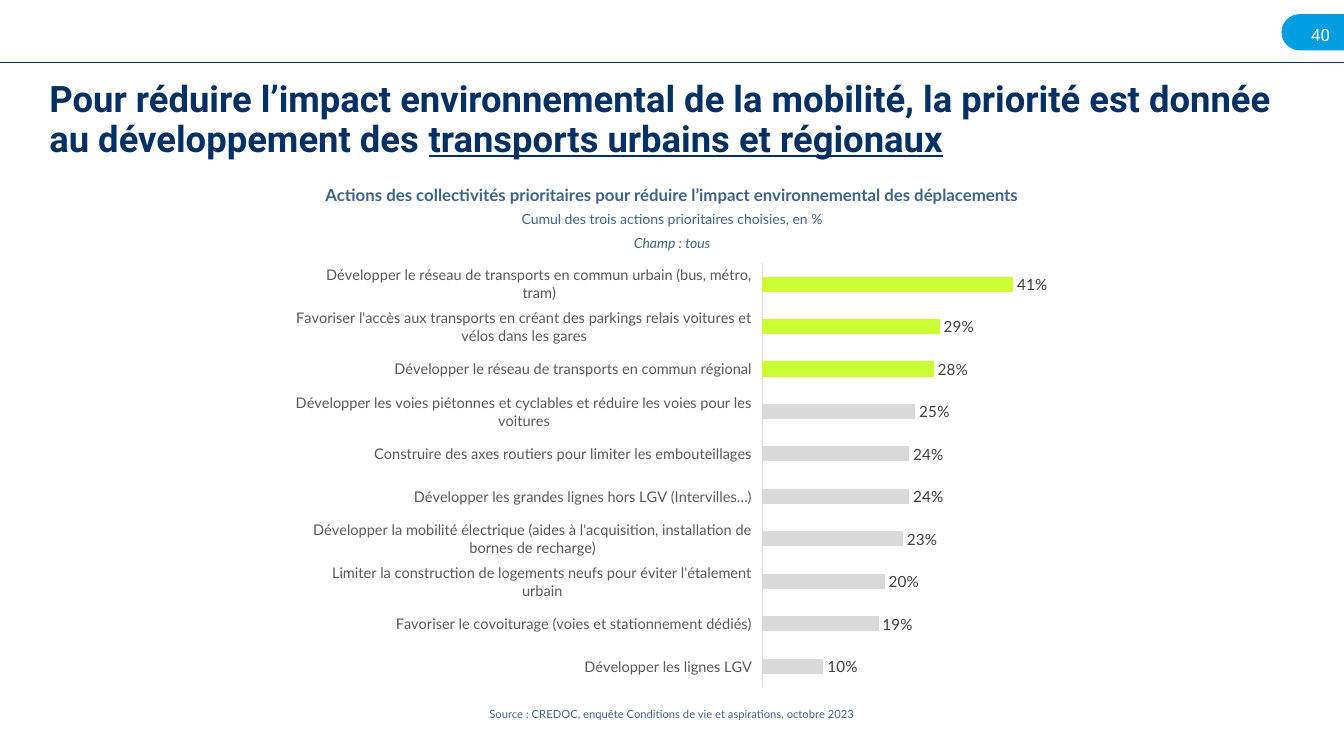
from dataclasses import dataclass

from lxml.etree import SubElement
from pptx import Presentation
from pptx.chart.data import CategoryChartData
from pptx.dml.color import RGBColor
from pptx.enum.chart import XL_CHART_TYPE, XL_LABEL_POSITION, XL_TICK_LABEL_POSITION, XL_TICK_MARK
from pptx.enum.shapes import MSO_CONNECTOR, MSO_SHAPE
from pptx.enum.text import MSO_ANCHOR, PP_ALIGN
from pptx.oxml import parse_xml
from pptx.oxml.ns import nsdecls, qn
from pptx.util import Inches, Pt

PAGE_NUMBER = "40"
TITLE = [
    ("Pour réduire l’impact environnemental de la mobilité, la priorité est donnée "
     "au développement des ", False),
    ("transports urbains et régionaux", True),
]
# text, top, height, size, extra format
CAPTIONS = [
    ("Actions des collectivités prioritaires pour réduire l’impact environnemental des déplacements",
     1.81, 0.23, "heading", {"bold": True}),
    ("Cumul des trois actions prioritaires choisies, en %", 2.06, 0.23, "caption", {}),
    ("Champ : tous", 2.3, 0.23, "caption", {"italic": True}),
    ("Source : CREDOC, enquête Conditions de vie et aspirations, octobre 2023",
     6.98, 0.37, "source", {}),
]
ACTIONS = [
    ("Développer le réseau de transports en commun urbain (bus, métro, tram)", 0.41),
    ("Favoriser l'accès aux transports en créant des parkings relais voitures et vélos dans les gares", 0.29),
    ("Développer le réseau de transports en commun régional", 0.28),
    ("Développer les voies piétonnes et cyclables et réduire les voies pour les voitures", 0.25),
    ("Construire des axes routiers pour limiter les embouteillages", 0.24),
    ("Développer les grandes lignes hors LGV (Intervilles…)", 0.24),
    ("Développer la mobilité électrique (aides à l'acquisition, installation de bornes de recharge)", 0.23),
    ("Limiter la construction de logements neufs pour éviter l'étalement urbain", 0.2),
    ("Favoriser le covoiturage (voies et stationnement dédiés)", 0.19),
    ("Développer les lignes LGV", 0.1),
]
HIGHLIGHTED = 3


@dataclass(frozen=True)
class Theme:
    navy = RGBColor.from_string("003064")
    blue = RGBColor.from_string("009EE0")
    white = RGBColor.from_string("FFFFFF")
    lime = RGBColor.from_string("CBFF33")
    grey = RGBColor.from_string("D9D9D9")
    axis_text = RGBColor.from_string("595959")
    label_text = RGBColor.from_string("404040")
    title_font = "Roboto"
    body_font = "Lato"
    sizes = {"title": 26, "number": 12, "heading": 12, "caption": 10, "source": 8,
             "category": 10.5, "value": 11}


WIDTH, HEIGHT = 13.33, 7.5
COLUMN_WIDTH = 0.56 * WIDTH
COLUMN_LEFT = (WIDTH - COLUMN_WIDTH) / 2
CHART_TOP, CHART_HEIGHT = 2.52, 4.39
PLOT = {"x": 0.616, "y": 0.02, "w": 0.37, "h": 0.96}  # shares of the chart frame
AXIS_MAXIMUM = 0.45


def set_font(font, size, color, name):
    font.size = Pt(Theme.sizes[size])
    font.color.rgb = color
    font.name = name


def add_text(page, spans, left, top, width, height, size, color=Theme.navy, name=Theme.body_font,
             align=PP_ALIGN.CENTER, anchor=MSO_ANCHOR.TOP, spacing=0.9, opacity=None,
             bold=False, italic=False):
    """Add one paragraph; spans are (text, underlined) pairs."""
    box = page.shapes.add_textbox(Inches(left), Inches(top), Inches(width), Inches(height))
    frame = box.text_frame
    frame.word_wrap = True
    frame.vertical_anchor = anchor
    para = frame.paragraphs[0]
    para.alignment = align
    para.line_spacing = spacing
    for text, underlined in spans:
        span = para.add_run()
        span.text = text
        set_font(span.font, size, color, name)
        span.font.bold, span.font.italic = bold, italic
        if underlined:
            span.font.underline = True
        if opacity:
            fill = span.font._element.find(qn("a:solidFill"))
            SubElement(fill[0], qn("a:alpha"), val=str(opacity * 1000))


def add_header(page):
    badge = page.shapes.add_shape(MSO_SHAPE.ROUNDED_RECTANGLE, Inches(12.71), Inches(0.14),
                                  Inches(2.02), Inches(0.36))
    badge.adjustments[0] = 0.5
    badge.shadow.inherit = False
    badge.fill.solid()
    badge.fill.fore_color.rgb = Theme.blue
    badge.line.fill.background()
    add_text(page, [(PAGE_NUMBER, False)], 12.7, 0.18, 0.59, 0.33, "number", color=Theme.white,
             name=Theme.title_font, align=PP_ALIGN.RIGHT, anchor=MSO_ANCHOR.MIDDLE, spacing=1.0)
    rule = page.shapes.add_connector(MSO_CONNECTOR.STRAIGHT, 0, Inches(0.62),
                                     Inches(WIDTH), Inches(0.62))
    rule.line.color.rgb = Theme.navy
    rule.line.width = Pt(1)
    SubElement(rule._element.spPr, qn("a:effectLst"))


def place_plot(chart):
    """Fix the inner plot area so that the bars start at a set place."""
    plot_area = chart._chartSpace.chart.plotArea
    for old in plot_area.findall(qn("c:layout")):
        plot_area.remove(old)
    parts = "".join(f'<c:{key} val="{share}"/>' for key, share in PLOT.items())
    plot_area.insert(0, parse_xml(
        f'<c:layout {nsdecls("c")}><c:manualLayout><c:layoutTarget val="inner"/>'
        f'<c:xMode val="edge"/><c:yMode val="edge"/>{parts}</c:manualLayout></c:layout>'))


def add_actions_chart(page):
    data = CategoryChartData(number_format="0%")
    data.categories = [action for action, _ in ACTIONS]
    data.add_series("Series 1", [share for _, share in ACTIONS])
    chart = page.shapes.add_chart(XL_CHART_TYPE.BAR_CLUSTERED, Inches(COLUMN_LEFT),
                                  Inches(CHART_TOP), Inches(COLUMN_WIDTH),
                                  Inches(CHART_HEIGHT), data).chart
    chart.has_legend = chart.has_title = False
    set_font(chart.font, "caption", Theme.axis_text, Theme.body_font)
    place_plot(chart)

    categories = chart.category_axis
    categories.reverse_order = True
    categories.major_tick_mark = categories.minor_tick_mark = XL_TICK_MARK.NONE
    categories.tick_label_position = XL_TICK_LABEL_POSITION.LOW
    categories.format.line.color.rgb = Theme.grey
    categories.format.line.width = Pt(0.75)
    set_font(categories.tick_labels.font, "category", Theme.axis_text, Theme.body_font)

    values = chart.value_axis
    values.minimum_scale, values.maximum_scale = 0, AXIS_MAXIMUM
    values.has_major_gridlines = False
    values.visible = False

    plot = chart.plots[0]
    plot.gap_width = 182
    plot.vary_by_categories = False
    bars = plot.series[0]
    bars.format.fill.solid()
    bars.format.fill.fore_color.rgb = Theme.lime
    for index in range(HIGHLIGHTED, len(ACTIONS)):
        fill = bars.points[index].format.fill
        fill.solid()
        fill.fore_color.rgb = Theme.grey
    labels = bars.data_labels
    labels.show_value = True
    labels.number_format, labels.number_format_is_linked = "0%", False
    labels.position = XL_LABEL_POSITION.OUTSIDE_END
    set_font(labels.font, "value", Theme.label_text, Theme.body_font)


def main():
    deck = Presentation()
    deck.slide_width, deck.slide_height = Inches(WIDTH), Inches(HEIGHT)
    page = deck.slides.add_slide(deck.slide_layouts[6])
    add_header(page)
    add_text(page, TITLE, 0.39, 0.76, 12.48, 0.84, "title", name=Theme.title_font,
             align=PP_ALIGN.LEFT, bold=True)
    for text, top, height, size, extra in CAPTIONS:
        add_text(page, [(text, False)], COLUMN_LEFT, top, COLUMN_WIDTH, height, size,
                 opacity=75, **extra)
    add_actions_chart(page)
    deck.save("out.pptx")


if __name__ == "__main__":
    main()
